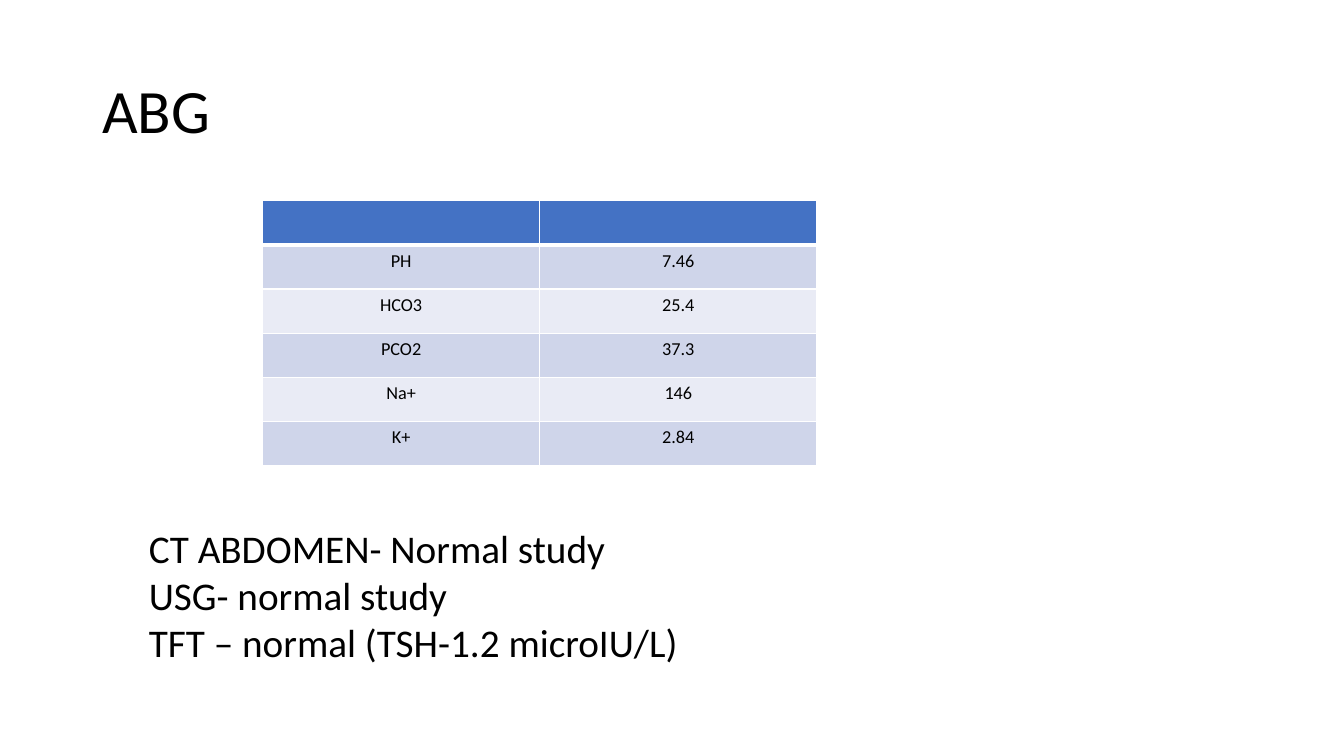
from lxml import etree
from pptx import Presentation
from pptx.dml.color import RGBColor
from pptx.enum import text
from pptx.oxml import ns
from pptx.util import Pt

FONT = "Calibri"
COLORS = {
    "text": "000000",
    "border": "FFFFFF",
    "header": "4472C4",
    "odd_row": "CFD5EA",
    "even_row": "E9EBF5",
}
ABG_ROWS = [
    ("", ""),
    ("PH", "7.46"),
    ("HCO3", "25.4"),
    ("PCO2", "37.3"),
    ("Na+", "146"),
    ("K+", "2.84"),
]
FINDINGS = [
    "CT ABDOMEN- Normal study",
    "USG- normal study",
    "TFT – normal (TSH-1.2 microIU/L)",
]


def rgb(name):
    return RGBColor.from_string(COLORS[name])


def style_paragraph(paragraph, size):
    paragraph.font.name = FONT
    paragraph.font.size = Pt(size)
    paragraph.font.color.rgb = rgb("text")


def add_text(slide, box, lines, size, anchor=text.MSO_ANCHOR.TOP, spacing=1.0):
    shape = slide.shapes.add_textbox(*map(Pt, box))
    frame = shape.text_frame
    frame.word_wrap = True
    frame.vertical_anchor = anchor
    frame.text = "\n".join(lines)
    for paragraph in frame.paragraphs:
        paragraph.line_spacing = spacing
        style_paragraph(paragraph, size)


def set_borders(cell, widths):
    properties = cell._tc.get_or_add_tcPr()
    for side, width in widths.items():
        line = etree.SubElement(properties, ns.qn(f"a:ln{side}"), w=str(Pt(width)))
        fill = etree.SubElement(line, ns.qn("a:solidFill"))
        etree.SubElement(fill, ns.qn("a:srgbClr"), val=COLORS["border"])


def add_table(slide, left, top, column_width, row_height, rows, size):
    columns = len(rows[0])
    frame = slide.shapes.add_table(
        len(rows), columns, Pt(left), Pt(top),
        Pt(column_width * columns), Pt(row_height * len(rows)))
    table = frame.table
    for column in table.columns:
        column.width = Pt(column_width)
    for index, values in enumerate(rows):
        table.rows[index].height = Pt(row_height)
        # Header first, then alternating bands
        band = "header" if index == 0 else "odd_row" if index % 2 else "even_row"
        # A thick rule separates the header from the values
        widths = {"L": 1, "R": 1, "T": 3 if index == 1 else 1, "B": 3 if index == 0 else 1}
        for cell, value in zip(table.rows[index].cells, values):
            set_borders(cell, widths)
            cell.fill.solid()
            cell.fill.fore_color.rgb = rgb(band)
            cell.text = value
            paragraph = cell.text_frame.paragraphs[0]
            paragraph.alignment = text.PP_ALIGN.CENTER
            style_paragraph(paragraph, size)


def main():
    presentation = Presentation()
    presentation.slide_width, presentation.slide_height = Pt(960), Pt(540)
    slide = presentation.slides.add_slide(presentation.slide_layouts[6])

    # Title
    add_text(slide, (66, 28.75, 828, 104.4), ["ABG"], 44, text.MSO_ANCHOR.MIDDLE, 0.9)
    # Blood gas values
    add_table(slide, 187.5, 143.3, 198, 31.55, ABG_ROWS, 13)
    # Other findings
    add_text(slide, (99.2, 370.8, 417, 143.3), FINDINGS, 28)

    presentation.save("out.pptx")


if __name__ == "__main__":
    main()
